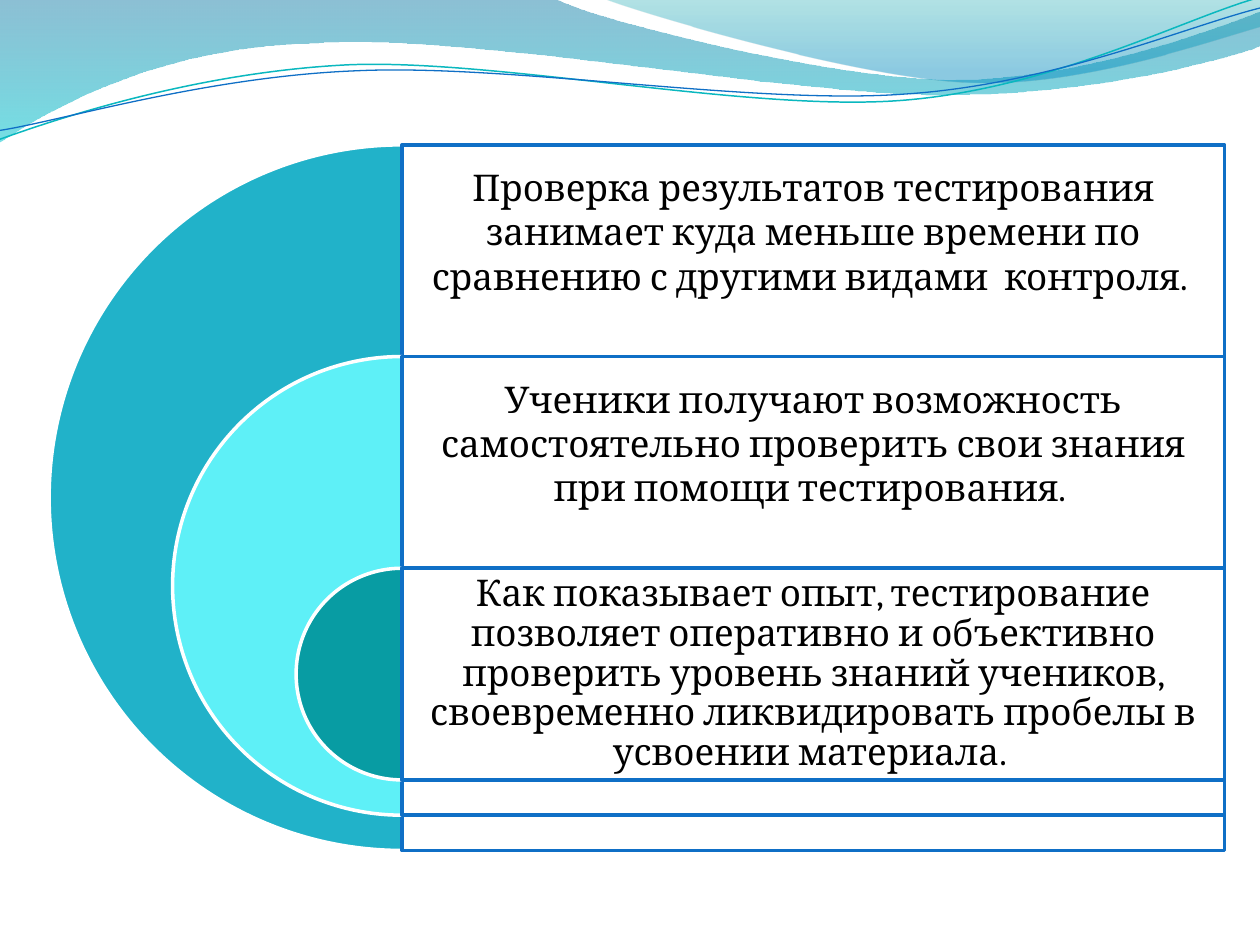
from lxml import etree
from pptx import Presentation
from pptx.dml.color import RGBColor
from pptx.enum.shapes import MSO_SHAPE
from pptx.enum.text import MSO_ANCHOR, PP_ALIGN
from pptx.oxml.ns import qn
from pptx.util import Inches, Pt

PIE, RECTANGLE = MSO_SHAPE.PIE, MSO_SHAPE.RECTANGLE
MIDDLE, CENTER = MSO_ANCHOR.MIDDLE, PP_ALIGN.CENTER

WHITE = RGBColor(0xFF, 0xFF, 0xFF)
BLACK = RGBColor(0x00, 0x00, 0x00)
BLUE = RGBColor(0x0F, 0x6F, 0xC6)
TEAL = RGBColor(0x0A, 0xB8, 0xBF)

THREAD_ROTATION = 357.3

# Each outline is a start point, then lines (x, y) and cubic curves (x1, y1, x2, y2, x, y).
# Gradient stops are position, colour and opacity in percent.
RIBBONS = [
    ([(0, 0), (4.4, -0.01), (4.76, 0.17, 6.64, 0.63, 7.58, 0.63),
      (8.53, 0.63, 9.58, 0.26, 10, 0.09), (10.01, 0.36),
      (9.83, 0.44, 8.7, 0.76, 7.46, 0.75), (6.22, 0.75, 3.82, 0.28, 2.57, 0.34),
      (1.29, 0.36, 0.46, 0.83, -0.01, 1.13)],
     [(0, RGBColor(0x00, 0x74, 0xA1), 45), (1, RGBColor(0x00, 0xC6, 0xCF), 55)]),
    ([(4.79, -0.01), (5.09, 0.11, 6.82, 0.62, 7.69, 0.65),
      (8.56, 0.69, 9.61, 0.32, 10, 0.21), (10, 0)],
     [(0, RGBColor(0x00, 0xA1, 0xA9), 30), (0.8, RGBColor(0x00, 0x8B, 0xBF), 45)]),
]
# Outline before rotation, colour, width in points
THREADS = [
    ([(-0.02, 0.87), (0.47, 0.72, 1.58, 0.41, 2.78, 0.41),
      (3.96, 0.42, 5.91, 0.93, 7.12, 0.9), (8.32, 0.87, 9.4, 0.36, 10, 0.22)], TEAL, 0.85),
    ([(-0.02, 0.8), (0.46, 0.75, 1.64, 0.45, 2.83, 0.46),
      (4.04, 0.46, 5.96, 0.88, 7.16, 0.85), (8.35, 0.83, 9.42, 0.42, 10.02, 0.3)], BLUE, 0.75),
]

# Text, colour of the half circle, bottom inset in inches, line spacing
ADVANTAGES = [
    ("Проверка результатов тестирования занимает куда меньше времени по "
     "сравнению с другими видами  контроля. ", RGBColor(0x21, 0xB2, 0xC9), 0.4, 1),
    ("Ученики получают возможность самостоятельно проверить свои знания "
     "при помощи тестирования. ", RGBColor(0x5E, 0xF0, 0xF7), 0.4, 1),
    ("Как показывает опыт, тестирование позволяет оперативно и объективно "
     "проверить уровень знаний учеников, своевременно ликвидировать пробелы в "
     "усвоении материала. ", RGBColor(0x08, 0x9C, 0xA3), 0.09, 0.9),
]


def set_opacity(shape, percents):
    """Give the fill colours of the shape, in order, these opacities."""
    for colour, percent in zip(shape.element.spPr.iter(qn("a:srgbClr")), percents):
        etree.SubElement(colour, qn("a:alpha")).set("val", str(percent * 1000))


def set_line(shape, colour, width):
    shape.line.color.rgb = colour
    shape.line.width = Pt(width)


def add_outline(shapes, outline, close):
    """Draw the points as line segments, then join each curve's three into a Bézier."""
    start, *segments = outline
    points = [(Inches(segment[i]), Inches(segment[i + 1]))
              for segment in segments for i in range(0, len(segment), 2)]
    builder = shapes.build_freeform(Inches(start[0]), Inches(start[1]), scale=1.0)
    builder.add_line_segments(points, close=close)
    shape = builder.convert_to_shape()
    shape.shadow.inherit = False

    lines = iter(list(shape.element.spPr.iter(qn("a:lnTo"))))
    for segment in segments:
        line = next(lines)
        if len(segment) == 6:
            line_parts = [line, next(lines), next(lines)]
            curve = etree.Element(qn("a:cubicBezTo"))
            line.addprevious(curve)
            for part in line_parts:
                curve.append(part[0])
                part.getparent().remove(part)
    return shape


def add_wave_header(slide):
    for outline, stops in RIBBONS:
        ribbon = add_outline(slide.shapes, outline, True)
        ribbon.line.fill.background()
        ribbon.fill.gradient()
        ribbon.fill.gradient_angle = 270
        for stop, (position, colour, _) in zip(ribbon.fill.gradient_stops, stops):
            stop.position = position
            stop.color.rgb = colour
        set_opacity(ribbon, [opacity for _, _, opacity in stops])

    threads = slide.shapes.add_group_shape().shapes
    for outline, colour, width in THREADS:
        thread = add_outline(threads, outline, False)
        thread.rotation = THREAD_ROTATION
        thread.fill.background()
        set_line(thread, colour, width)


def add_block(shapes, preset, box, fill, line):
    block = shapes.add_shape(preset, *box)
    block.shadow.inherit = False
    block.fill.solid()
    block.fill.fore_color.rgb = fill
    set_line(block, line, 2)
    return block


def add_caption(shapes, box, text, bottom_inset, line_spacing):
    frame = shapes.add_textbox(*box).text_frame
    inset = Inches(0.09)
    frame_format = {"word_wrap": True, "vertical_anchor": MIDDLE,
                    "margin_left": inset, "margin_right": inset,
                    "margin_top": inset, "margin_bottom": Inches(bottom_inset)}
    for name, value in frame_format.items():
        setattr(frame, name, value)
    paragraph = frame.paragraphs[0]
    paragraph.alignment = CENTER
    paragraph.line_spacing = line_spacing
    run = paragraph.add_run()
    run.text = text
    for name, value in {"name": "Cambria", "size": Pt(21)}.items():
        setattr(run.font, name, value)
    run.font.color.rgb = BLACK


def add_target_list(slide, left, top, width, height):
    """Nested half circles, each with a panel that starts at its centre line."""
    shapes = slide.shapes.add_group_shape().shapes
    row_height = int(height * 0.3)
    shrink = int(height * 0.35)
    centre = left + height // 2
    panel_width = left + width - centre
    for index, (text, colour, bottom_inset, line_spacing) in enumerate(ADVANTAGES):
        diameter = height - index * shrink
        row_top = top + index * row_height
        pie = add_block(shapes, PIE, (centre - diameter // 2, row_top, diameter, diameter),
                        colour, WHITE)
        pie.adjustments[0], pie.adjustments[1] = 54, 162
        panel = add_block(shapes, RECTANGLE, (centre, row_top, panel_width, diameter),
                          WHITE, BLUE)
        set_opacity(panel, [90])
        add_caption(shapes, (centre, row_top, panel_width, row_height),
                    text, bottom_inset, line_spacing)


def main():
    presentation = Presentation()
    presentation.slide_width = Inches(10)
    presentation.slide_height = Inches(7.5)
    slide = presentation.slides.add_slide(presentation.slide_layouts[6])
    add_wave_header(slide)
    add_target_list(slide, Inches(0.39), Inches(1.15), Inches(9.33), Inches(5.6))
    presentation.save("out.pptx")


if __name__ == "__main__":
    main()
